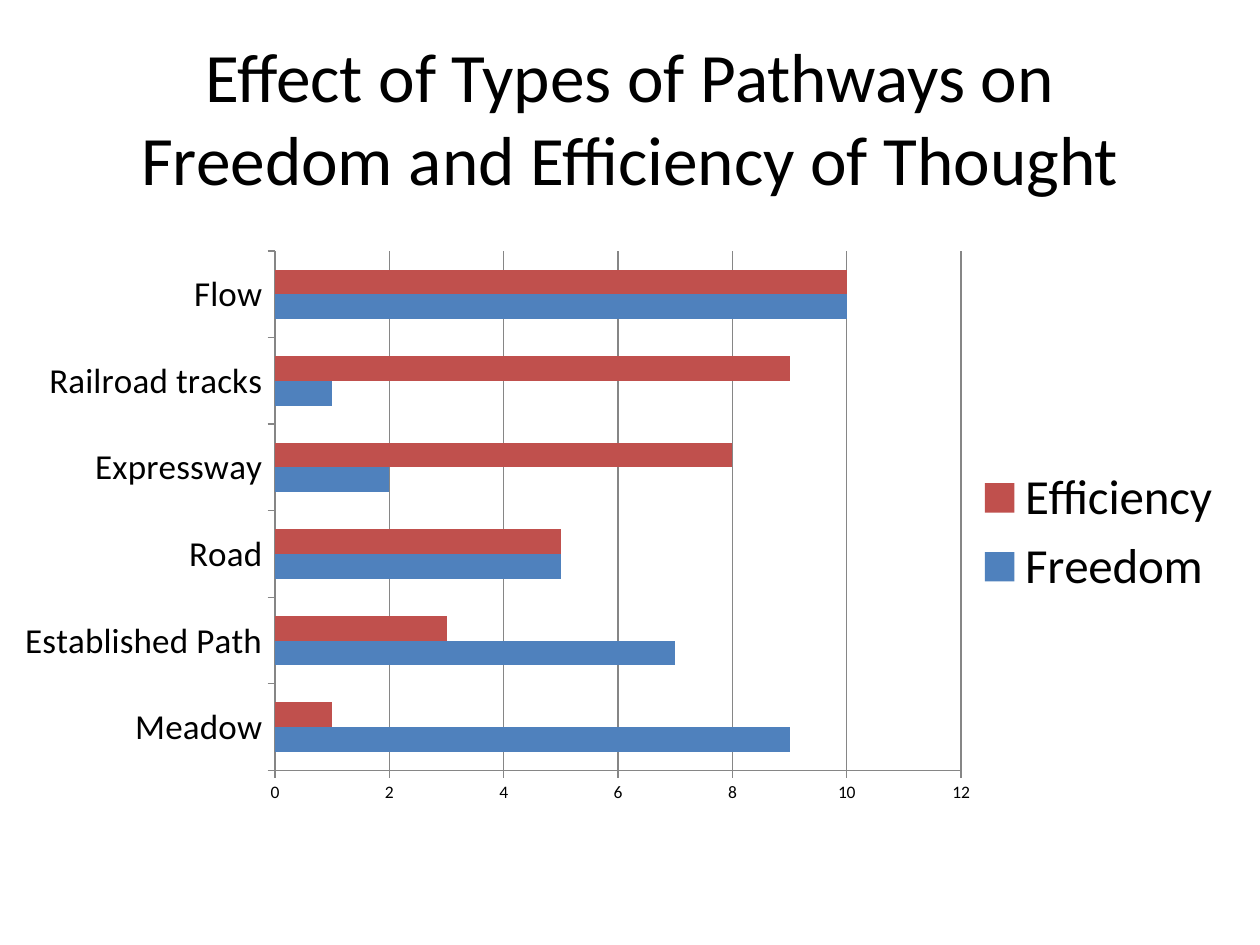
import pptx
import pptx.util
from pptx.chart.data import CategoryChartData
from pptx.dml.color import RGBColor
from pptx.enum.chart import XL_CHART_TYPE, XL_LEGEND_POSITION, XL_TICK_MARK
from pptx.enum.text import MSO_ANCHOR, MSO_AUTO_SIZE, PP_ALIGN
from pptx.oxml import parse_xml
from pptx.oxml.ns import nsdecls
from pptx.util import Inches, Pt

# Content
TITLE = "Effect of Types of Pathways on Freedom and Efficiency of Thought"
PATHWAYS = ["Meadow", "Established Path", "Road", "Expressway",
            "Railroad tracks", "Flow"]
SERIES = [
    ("Freedom", "4F81BD", (9, 7, 5, 2, 1, 10)),
    ("Efficiency", "C0504D", (1, 3, 5, 8, 9, 10)),
]
PLOT_AREA = {"x": 0.222, "y": 0.049, "w": 0.554, "h": 0.833}
FONT, TEXT, LINE = "Calibri", "000000", "868686"


def rgb(value):
    return RGBColor.from_string(value)


def set_font(font, size):
    font.name = FONT
    font.size = Pt(size)
    font.bold = False
    font.color.rgb = rgb(TEXT)


def set_line(line):
    line.color.rgb = rgb(LINE)
    line.width = Pt(0.75)


def place_plot_area(chart, box):
    """Fix the inner plot area as fractions of the chart frame."""
    plot_area = chart._chartSpace.chart.plotArea
    for old in plot_area.findall(pptx.oxml.ns.qn("c:layout")):
        plot_area.remove(old)
    modes = '<c:xMode val="edge"/><c:yMode val="edge"/>'
    sizes = "".join(f'<c:{k} val="{v}"/>' for k, v in box.items())
    plot_area.insert(0, parse_xml(
        f'<c:layout {nsdecls("c")}><c:manualLayout>'
        f'<c:layoutTarget val="inner"/>{modes}{sizes}'
        '</c:manualLayout></c:layout>'))


prs = pptx.Presentation()
prs.slide_width, prs.slide_height = Inches(10), Inches(7.5)
s = prs.slides.add_slide(prs.slide_layouts[5])

# Title
sp = s.shapes.title
sp.left, sp.top = Inches(0.5), Inches(0.3)
sp.width, sp.height = Inches(9), Inches(1.25)
tf = sp.text_frame
tf.word_wrap = True
tf.auto_size = MSO_AUTO_SIZE.NONE
tf.vertical_anchor = MSO_ANCHOR.MIDDLE
p = tf.paragraphs[0]
p.alignment = PP_ALIGN.CENTER
r = p.add_run()
r.text = TITLE
set_font(r.font, 39.6)

# Bar chart
data = CategoryChartData(number_format="General")
data.categories = PATHWAYS
for name, _, values in SERIES:
    data.add_series(name, values)
chart = s.shapes.add_chart(
    XL_CHART_TYPE.BAR_CLUSTERED, Inches(0), Inches(1.75),
    Inches(9.83), Inches(4.95), data).chart
chart.has_title = False
set_font(chart.font, 10)
place_plot_area(chart, PLOT_AREA)

plot = chart.plots[0]
plot.gap_width = 150
plot.vary_by_categories = False
for series, (_, color, _) in zip(plot.series, SERIES):
    series.format.fill.solid()
    series.format.fill.fore_color.rgb = rgb(color)

# Axes
for axis, size in ((chart.category_axis, 20), (chart.value_axis, 10)):
    axis.major_tick_mark = XL_TICK_MARK.OUTSIDE
    axis.minor_tick_mark = XL_TICK_MARK.NONE
    set_font(axis.tick_labels.font, size)
    set_line(axis.format.line)
value_axis = chart.value_axis
value_axis.minimum_scale, value_axis.maximum_scale = 0, 12
value_axis.major_unit = 2
value_axis.has_major_gridlines = True
set_line(value_axis.major_gridlines.format.line)

# Legend
chart.has_legend = True
chart.legend.position = XL_LEGEND_POSITION.RIGHT
chart.legend.include_in_layout = False
set_font(chart.legend.font, 28)

prs.save("out.pptx")
